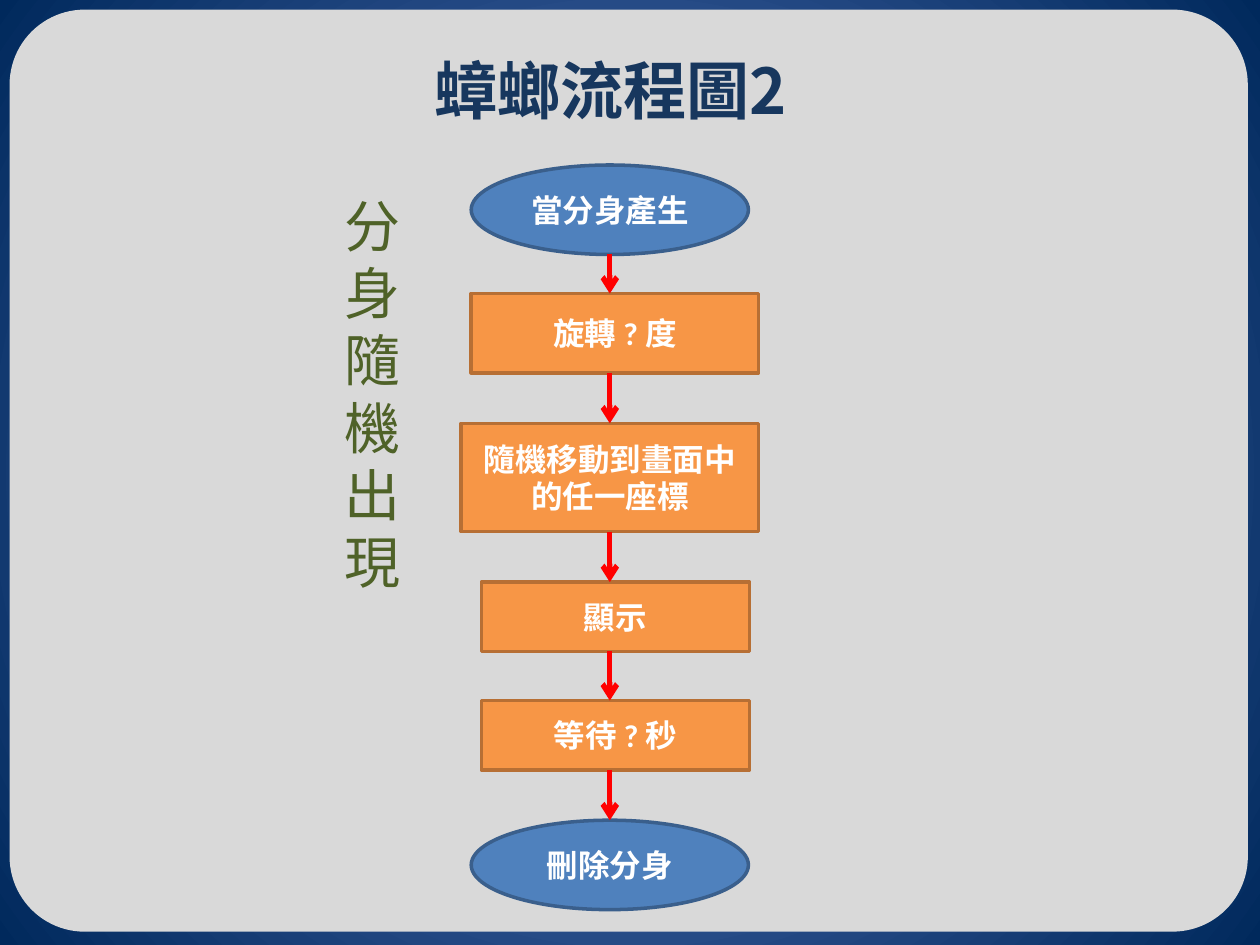
from dataclasses import dataclass
from itertools import pairwise

from lxml import etree
from pptx import Presentation
from pptx.dml.color import RGBColor
from pptx.enum.shapes import MSO_CONNECTOR, MSO_SHAPE
from pptx.enum.text import MSO_ANCHOR, PP_ALIGN
from pptx.oxml.ns import qn
from pptx.shapes.base import BaseShape
from pptx.slide import Slide
from pptx.text.text import TextFrame
from pptx.util import Inches, Pt

OVAL = MSO_SHAPE.OVAL
RECT = MSO_SHAPE.RECTANGLE
ROUND = MSO_SHAPE.ROUNDED_RECTANGLE
LINE = MSO_CONNECTOR.STRAIGHT
MID = MSO_ANCHOR.MIDDLE
TOP = MSO_ANCHOR.TOP
CENTER = PP_ALIGN.CENTER

WIDE, HIGH = Inches(10), Inches(7.5)
COLS, ROWS = 100, 75
AXIS = 48.4


@dataclass(frozen=True)
class Theme:
    glow: str = "5E7CC5"
    navy: str = "00295C"
    panel: str = "D9D9D9"
    title: str = "17375E"
    side: str = "4F6228"
    blue: str = "4F81BD"
    blue_edge: str = "3A5F8C"
    gold: str = "F79646"
    gold_edge: str = "B76F34"
    white: str = "FFFFFF"
    red: str = "FF0000"
    latin: str = "Calibri"
    asian: str = "Noto Sans CJK JP"
    title_size: int = 36
    side_size: int = 32
    step_size: int = 18
    edge: int = 2
    arrow: int = 3
    lead: float = 1.2


@dataclass(frozen=True)
class Box:
    col: float
    row: float
    cols: float
    rows: float

    @property
    def end(self) -> float:
        return self.row + self.rows

    def place(self) -> tuple[int, int, int, int]:
        return x_at(self.col), y_at(self.row), x_at(self.cols), y_at(self.rows)


@dataclass(frozen=True)
class Style:
    size: int
    color: str
    font: str
    bold: bool
    anchor: MSO_ANCHOR


@dataclass(frozen=True)
class Step:
    text: str
    box: Box
    oval: bool = False


THEME = Theme()
HEAD = Style(THEME.title_size, THEME.title, THEME.asian, True, TOP)
SIDE = Style(THEME.side_size, THEME.side, THEME.asian, False, TOP)
BODY = Style(THEME.step_size, THEME.white, THEME.latin, True, MID)

STEPS = (
    Step("當分身產生", Box(37.4, 13.1, 22, 7.1), True),
    Step("旋轉 ? 度", Box(37.4, 23.3, 22.8, 6.3)),
    Step("隨機移動到畫面中的任一座標", Box(36.6, 33.6, 23.6, 8.6)),
    Step("顯示", Box(38.2, 46.2, 21.3, 5.5)),
    Step("等待 ? 秒", Box(38.2, 55.6, 21.3, 5.5)),
    Step("刪除分身", Box(37.4, 65.1, 22, 7.1), True),
)


def x_at(col: float) -> int:
    return round(WIDE * col / COLS)


def y_at(row: float) -> int:
    return round(HIGH * row / ROWS)


def rgb(code: str) -> RGBColor:
    return RGBColor.from_string(code)


def paint(slide: Slide) -> None:
    fill = slide.background.fill
    fill.gradient()
    for stop, code, spot in zip(fill.gradient_stops, (THEME.glow, THEME.navy), (0, 1)):
        stop.color.rgb = rgb(code)
        stop.position = spot
    grad = slide.background._cSld.find(".//" + qn("a:gradFill"))
    grad.remove(grad.find(qn("a:lin")))
    way = etree.SubElement(grad, qn("a:path"), path="circle")
    etree.SubElement(way, qn("a:fillToRect"), l="50000", t="50000", r="50000", b="50000")


def write(frame: TextFrame, text: str, style: Style) -> None:
    frame.text = text
    frame.word_wrap = True
    frame.vertical_anchor = style.anchor
    for para in frame.paragraphs:
        para.alignment = CENTER
        para.line_spacing = Pt(style.size * THEME.lead)
        for run in para.runs:
            font = run.font
            font.size = Pt(style.size)
            font.bold = style.bold
            font.color.rgb = rgb(style.color)
            font.name = style.font
            etree.SubElement(run._r.get_or_add_rPr(), qn("a:ea"), typeface=THEME.asian)


def shape(slide: Slide, kind: MSO_SHAPE, box: Box, fill: str, edge: str) -> BaseShape:
    item = slide.shapes.add_shape(kind, *box.place())
    item.shadow.inherit = False
    item.fill.solid()
    item.fill.fore_color.rgb = rgb(fill)
    item.line.color.rgb = rgb(edge)
    item.line.width = Pt(THEME.edge)
    return item


def label(slide: Slide, box: Box, text: str, style: Style) -> None:
    write(slide.shapes.add_textbox(*box.place()).text_frame, text, style)


def node(slide: Slide, step: Step) -> None:
    if step.oval:
        item = shape(slide, OVAL, step.box, THEME.blue, THEME.blue_edge)
    else:
        item = shape(slide, RECT, step.box, THEME.gold, THEME.gold_edge)
    write(item.text_frame, step.text, BODY)


def arrow(slide: Slide, start: float, stop: float) -> None:
    link = slide.shapes.add_connector(LINE, x_at(AXIS), y_at(start), x_at(AXIS), y_at(stop))
    link.line.color.rgb = rgb(THEME.red)
    link.line.width = Pt(THEME.arrow)
    etree.SubElement(link.line._get_or_add_ln(), qn("a:tailEnd"), type="arrow")
    etree.SubElement(link._element.spPr, qn("a:effectLst"))


def main() -> None:
    deck = Presentation()
    deck.slide_width, deck.slide_height = WIDE, HIGH
    slide = deck.slides.add_slide(deck.slide_layouts[6])
    paint(slide)
    panel = shape(slide, ROUND, Box(0.9, 0.9, 98, 72.9), THEME.panel, THEME.panel)
    panel.adjustments[0] = 0.08
    label(slide, Box(25.6, 3.6, 45.7, 7.1), "蟑螂流程圖2", HEAD)
    label(slide, Box(25.6, 14.7, 7.9, 33.3), "\n".join("分身隨機出現"), SIDE)
    for step in STEPS:
        node(slide, step)
    for prior, after in pairwise(STEPS):
        arrow(slide, prior.box.end, after.box.row)
    deck.save("out.pptx")


if __name__ == "__main__":
    main()
